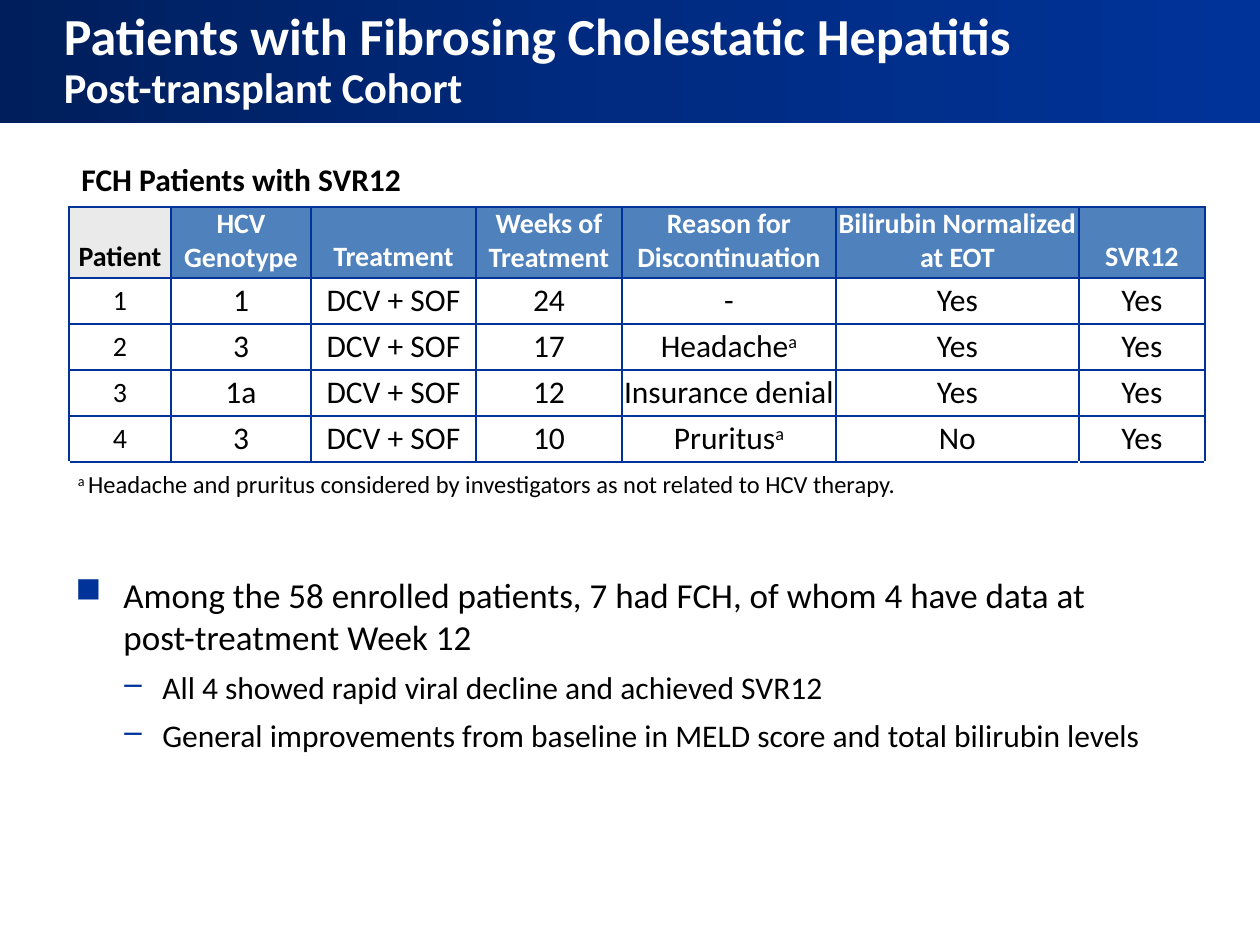
from copy import deepcopy
from typing import NamedTuple

from lxml.etree import SubElement
from pptx import Presentation
from pptx.dml.color import RGBColor
from pptx.enum.shapes import MSO_SHAPE
from pptx.enum.text import MSO_ANCHOR, PP_ALIGN
from pptx.oxml.ns import qn
from pptx.util import Emu, Pt

PX_PER_INCH = 126
FONT = "Calibri"
NAVY, BLUE, HEADER_BLUE = "001E5B", "003399", "4F81BD"
BLACK, WHITE, GREY = "000000", "FFFFFF", "EAEAEA"
ALL_SIDES = ("L", "R", "T", "B")
SIDE_INSET = 9

HEADERS = ["Patient", "HCV\vGenotype", "Treatment", "Weeks of Treatment",
           "Reason for\vDiscontinuation", "Bilirubin Normalized\vat EOT", "SVR12"]
COLUMN_WIDTHS = [102, 140, 165, 146, 214, 243, 126]
HEADER_HEIGHT, ROW_HEIGHT = 70, 46
FOOTNOTE = "Headache and pruritus considered by investigators as not related to HCV therapy."


class Patient(NamedTuple):
    genotype: str
    weeks: str
    reason: str
    normalized: str
    footnote_mark: str = ""


class Bullet(NamedTuple):
    text: str
    size: int
    symbol: str
    indent: int
    hanging: int


PATIENTS = [
    Patient("1", "24", "-", "Yes"),
    Patient("3", "17", "Headache", "Yes", "a"),
    Patient("1a", "12", "Insurance denial", "Yes"),
    Patient("3", "10", "Pruritus", "No", "a"),
]
BULLETS = [
    Bullet("Among the 58 enrolled patients, 7 had FCH, of whom 4 have data at \v"
           "post-treatment Week 12", 20, "■", 48, 48),
    Bullet("All 4 showed rapid viral decline and achieved SVR12", 18, "–", 87, 38),
    Bullet("General improvements from baseline in MELD score and total bilirubin levels",
           18, "–", 87, 38),
]


def px(length: int) -> Emu:
    return Emu(round(length * 914400 / PX_PER_INCH))


def rgb(color: str) -> RGBColor:
    return RGBColor.from_string(color)


def style(paragraph, size: float, color: str = BLACK, bold: bool = False) -> None:
    font = paragraph.font
    font.name, font.size, font.bold = FONT, Pt(size), bold
    font.color.rgb = rgb(color)


def add_superscript(paragraph, text: str) -> None:
    run = paragraph.add_run()
    run.text = text
    run.font._element.set("baseline", "30000")


def add_border(cell, sides: tuple) -> None:
    properties = cell._tc.get_or_add_tcPr()
    for side in sides:
        line = SubElement(properties, qn(f"a:ln{side}"), w=str(Pt(1)))
        fill = SubElement(line, qn("a:solidFill"))
        SubElement(fill, qn("a:srgbClr"), val=BLUE)


def format_cell(cell, fill: str = WHITE, sides: tuple = ALL_SIDES,
                side_inset: int = SIDE_INSET, bottom_inset: int = 0,
                anchor: MSO_ANCHOR = MSO_ANCHOR.MIDDLE) -> None:
    cell.margin_left = cell.margin_right = px(side_inset)
    cell.margin_top, cell.margin_bottom = 0, px(bottom_inset)
    cell.vertical_anchor = anchor
    add_border(cell, sides)
    cell.fill.solid()
    cell.fill.fore_color.rgb = rgb(fill)


def add_title(slide) -> None:
    banner = slide.shapes.add_shape(MSO_SHAPE.RECTANGLE, 0, 0, px(1260), px(123))
    banner.shadow.inherit = False
    banner.line.fill.background()
    banner.fill.gradient()
    banner.fill.gradient_angle = 0
    first_stop = banner.fill.gradient_stops[0]._gs
    first_stop.addnext(deepcopy(first_stop))
    for stop, color, position in zip(banner.fill.gradient_stops,
                                     (NAVY, "002B81", BLUE), (0, 0.5, 1)):
        stop.color.rgb, stop.position = rgb(color), position

    frame = banner.text_frame
    frame.word_wrap = True
    frame.vertical_anchor = MSO_ANCHOR.MIDDLE
    frame.margin_left, frame.margin_right = px(64), px(54)
    heading = frame.paragraphs[0]
    heading.alignment, heading.line_spacing = PP_ALIGN.LEFT, 0.9
    style(heading, 29.7, WHITE, True)
    heading.add_run().text = "Patients with Fibrosing Cholestatic Hepatitis"
    heading.add_line_break()
    subtitle = heading.add_run()
    subtitle.text, subtitle.font.size = "Post-transplant Cohort", Pt(24.3)


def add_bullets(slide) -> None:
    frame = slide.shapes.add_textbox(px(63), px(567), px(1157), px(222)).text_frame
    frame.word_wrap = True
    for index, bullet in enumerate(BULLETS):
        paragraph = frame.paragraphs[0] if index == 0 else frame.add_paragraph()
        paragraph.text = bullet.text
        paragraph.space_after = Pt(6)
        style(paragraph, bullet.size)
        properties = paragraph._p.get_or_add_pPr()
        properties.set("marL", str(px(bullet.indent)))
        properties.set("indent", str(-px(bullet.hanging)))
        symbol_color = properties.makeelement(qn("a:buClr"), {})
        SubElement(symbol_color, qn("a:srgbClr"), val=BLUE)
        symbol = properties.makeelement(qn("a:buChar"), {"char": bullet.symbol})
        properties.find(qn("a:defRPr")).addprevious(symbol_color)
        symbol_color.addnext(symbol)


def add_patient_table(slide) -> None:
    row_count = len(PATIENTS) + 2
    table = slide.shapes.add_table(
        row_count, len(HEADERS), px(69), px(207), px(sum(COLUMN_WIDTHS)),
        px(HEADER_HEIGHT + ROW_HEIGHT * (row_count - 1))).table
    table.first_row = table.horz_banding = False
    for column, width in zip(table.columns, COLUMN_WIDTHS):
        column.width = px(width)
    for index, row in enumerate(table.rows):
        row.height = px(ROW_HEIGHT if index else HEADER_HEIGHT)

    for column, label in enumerate(HEADERS):
        cell = table.cell(0, column)
        cell.text = label
        format_cell(cell, HEADER_BLUE if column else GREY, bottom_inset=4,
                    side_inset=0 if "Bilirubin" in label else SIDE_INSET,
                    anchor=MSO_ANCHOR.BOTTOM)
        paragraph = cell.text_frame.paragraphs[0]
        paragraph.alignment = PP_ALIGN.CENTER
        style(paragraph, 16, WHITE if column else BLACK, True)

    for number, patient in enumerate(PATIENTS, start=1):
        values = [str(number), patient.genotype, "DCV + SOF", patient.weeks,
                  patient.reason, patient.normalized, "Yes"]
        for column, value in enumerate(values):
            cell = table.cell(number, column)
            cell.text = value
            format_cell(cell, side_inset=0 if value == "Insurance denial" else SIDE_INSET)
            paragraph = cell.text_frame.paragraphs[0]
            paragraph.alignment = PP_ALIGN.CENTER
            style(paragraph, 18 if column else 16)
        if patient.footnote_mark:
            reason = table.cell(number, HEADERS.index("Reason for\vDiscontinuation"))
            add_superscript(reason.text_frame.paragraphs[0], patient.footnote_mark)

    last_row = row_count - 1
    for column in range(len(HEADERS)):
        format_cell(table.cell(last_row, column), sides=("T",))
    footnote = table.cell(last_row, 0)
    footnote.merge(table.cell(last_row, len(HEADERS) - 2))
    paragraph = footnote.text_frame.paragraphs[0]
    style(paragraph, 14)
    add_superscript(paragraph, "a ")
    paragraph.add_run().text = FOOTNOTE


def add_table_caption(slide) -> None:
    frame = slide.shapes.add_textbox(px(69), px(154), px(349), px(50)).text_frame
    frame.word_wrap = False
    caption = frame.paragraphs[0]
    caption.text = "FCH Patients with SVR12"
    style(caption, 18, bold=True)


def main() -> None:
    presentation = Presentation()
    presentation.slide_width, presentation.slide_height = px(1260), px(945)
    slide = presentation.slides.add_slide(presentation.slide_layouts[6])
    add_title(slide)
    add_bullets(slide)
    add_patient_table(slide)
    add_table_caption(slide)
    presentation.save("out.pptx")


if __name__ == "__main__":
    main()
